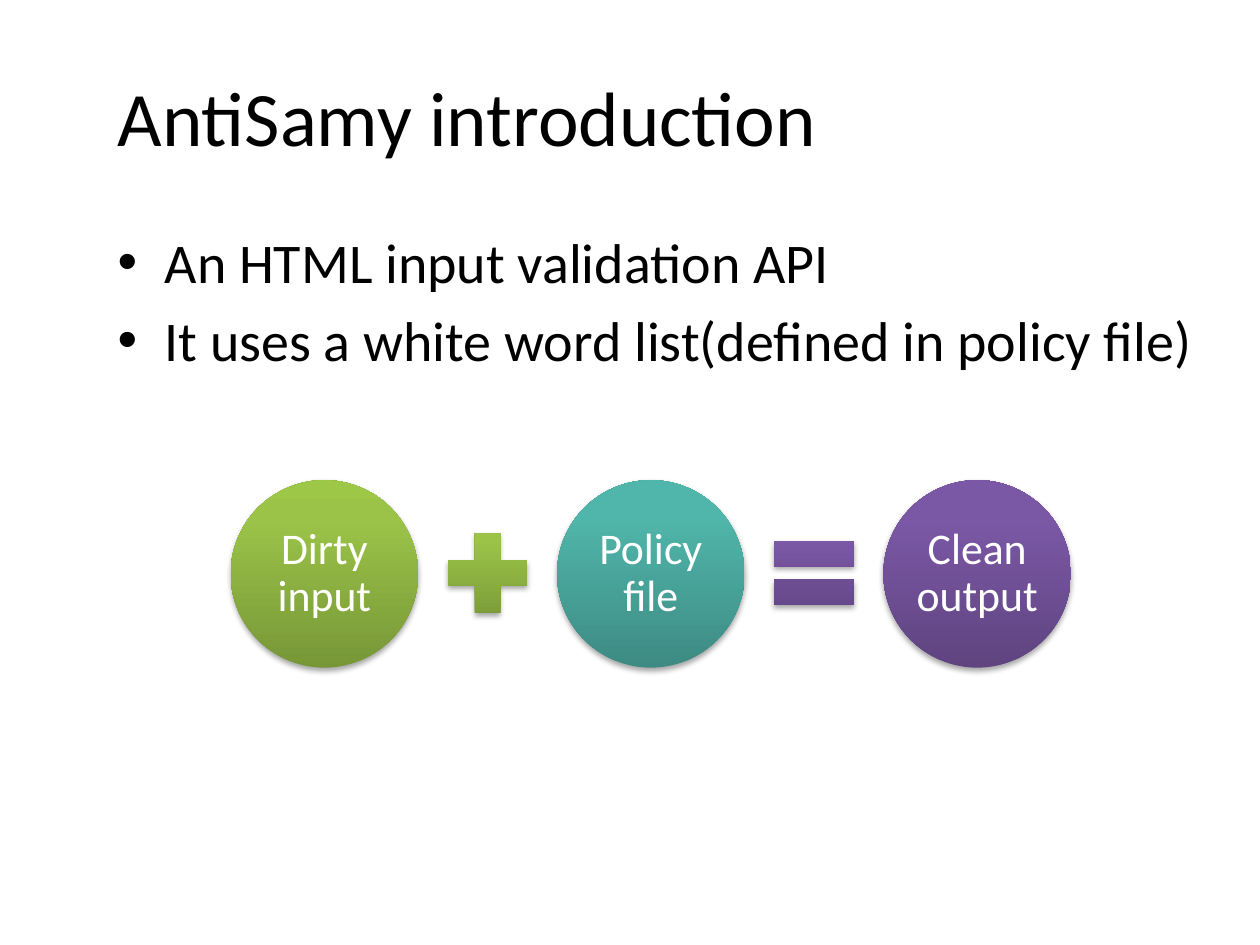
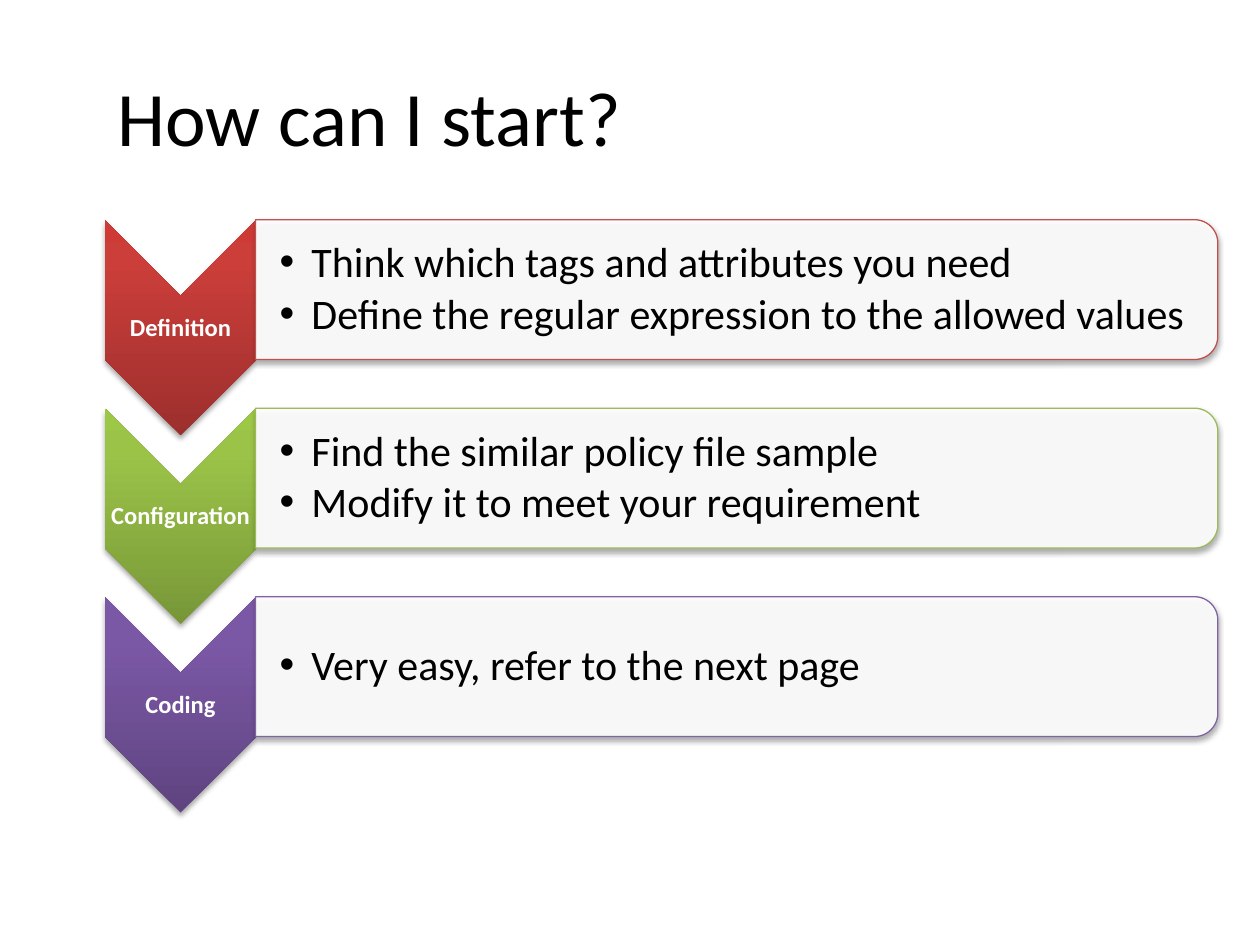
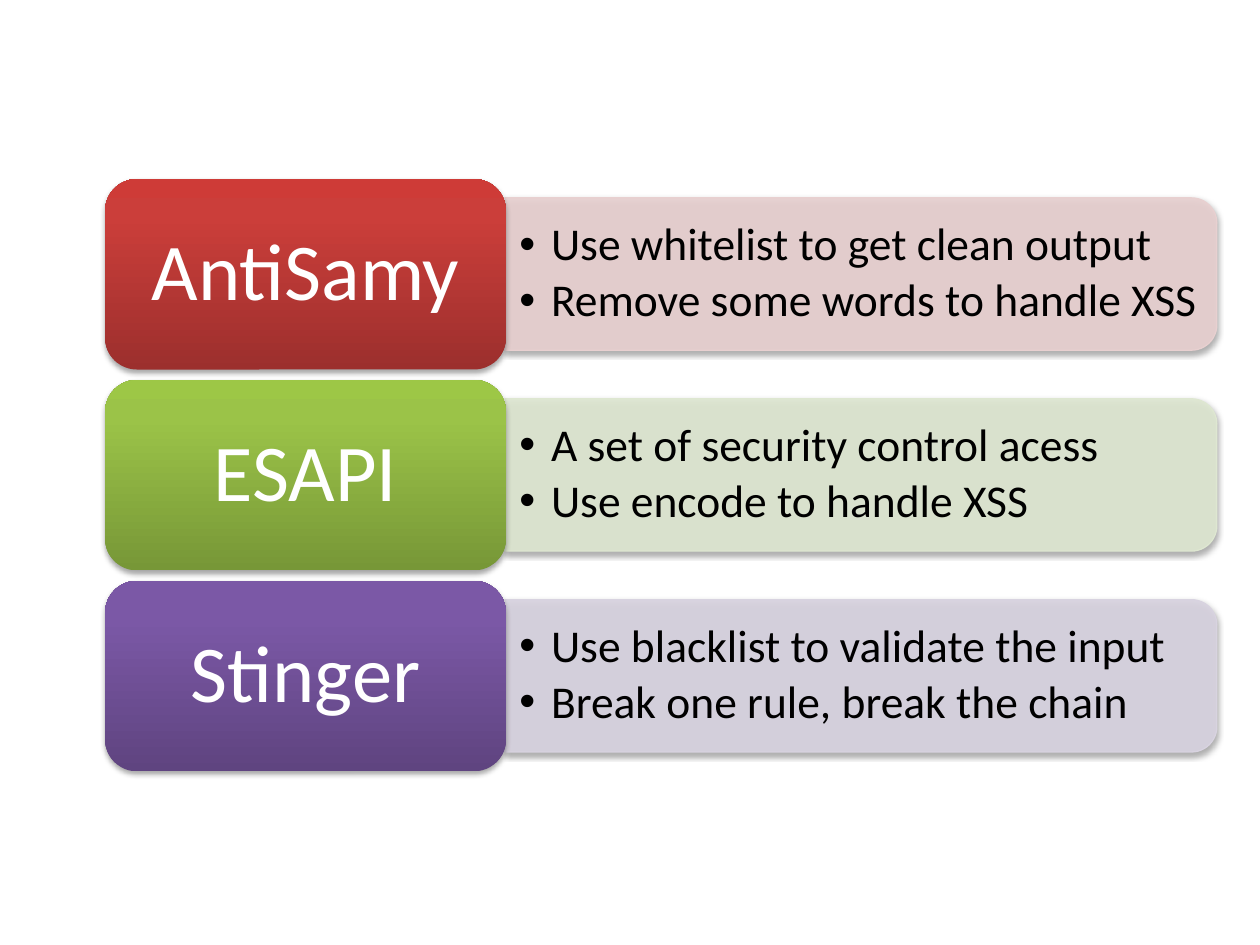
from lxml.etree import SubElement
from pptx import Presentation
from pptx.dml.color import RGBColor
from pptx.enum.shapes import MSO_SHAPE
from pptx.enum.text import MSO_ANCHOR, PP_ALIGN
from pptx.oxml import parse_xml
from pptx.oxml.ns import nsdecls, qn
from pptx.util import Cm, Pt

FONT = "Calibri"
BLACK = RGBColor(0x00, 0x00, 0x00)
WHITE = RGBColor(0xFF, 0xFF, 0xFF)
RED_LINE = RGBColor(0xC0, 0x50, 0x4D)
GREEN_LINE = RGBColor(0x9B, 0xBB, 0x59)
PURPLE_LINE = RGBColor(0x80, 0x64, 0xA2)
PALE_RED = RGBColor(0xE8, 0xD0, 0xD0)
PALE_GREEN = RGBColor(0xDE, 0xE7, 0xD1)
PALE_PURPLE = RGBColor(0xD8, 0xD3, 0xE0)
RED = (RGBColor(0x9C, 0x2F, 0x2D), RGBColor(0xCB, 0x3E, 0x3A), RGBColor(0xCE, 0x3B, 0x37))
GREEN = (RGBColor(0x77, 0x97, 0x37), RGBColor(0x9B, 0xC3, 0x48), RGBColor(0x9D, 0xC7, 0x46))
TEAL = (RGBColor(0x3D, 0x8B, 0x83), RGBColor(0x50, 0xB5, 0xAA), RGBColor(0x4E, 0xB8, 0xAC))
PURPLE = (RGBColor(0x5F, 0x44, 0x80), RGBColor(0x7B, 0x58, 0xA6), RGBColor(0x7C, 0x57, 0xA8))


def add_block(slide, kind, box, gradient=None, color=None, line_color=None):
    shape = slide.shapes.add_shape(kind, *[Cm(length) for length in box])
    properties = shape._element.spPr
    if gradient:
        stops = "".join(
            f'<a:gs pos="{position}"><a:srgbClr val="{stop}"/></a:gs>'
            for position, stop in zip((0, 80000, 100000), gradient)
        )
        properties.append(parse_xml(
            f'<a:gradFill {nsdecls("a")} rotWithShape="0"><a:gsLst>{stops}</a:gsLst>'
            '<a:lin ang="16200000" scaled="0"/></a:gradFill>'
        ))
        shape.line.fill.background()
    else:
        shape.fill.solid()
        shape.fill.fore_color.rgb = color
        fill_color = properties.find(qn("a:solidFill")).find(qn("a:srgbClr"))
        SubElement(fill_color, qn("a:alpha"), val="90000")
        shape.line.color.rgb = line_color
        shape.line.width = Pt(0.75)
    shape.shadow.inherit = False
    properties.find(qn("a:effectLst")).append(parse_xml(
        f'<a:outerShdw {nsdecls("a")} blurRad="40000" dist="23000" dir="5400000" rotWithShape="0">'
        '<a:srgbClr val="000000"><a:alpha val="35000"/></a:srgbClr></a:outerShdw>'
    ))
    return shape


def write_text(shape, lines, size, color=BLACK, align=PP_ALIGN.LEFT, anchor=MSO_ANCHOR.MIDDLE,
               margins=(0.25, 0.13), spacing=0.9, gap=0, indent=0, bold=False):
    frame = shape.text_frame
    frame.word_wrap = True
    frame.vertical_anchor = anchor
    frame.margin_left, frame.margin_right = Cm(margins[0]), Cm(min(margins[0], 0.25))
    frame.margin_top = frame.margin_bottom = Cm(margins[1])
    frame.text = "\n".join(lines)
    for index, paragraph in enumerate(frame.paragraphs):
        if indent:
            settings = paragraph._p.get_or_add_pPr()
            settings.set("marL", str(Cm(indent)))
            settings.set("indent", str(-Cm(indent)))
            SubElement(settings, qn("a:buFont"), typeface="Arial")
            SubElement(settings, qn("a:buChar"), char="•")
        paragraph.alignment = align
        paragraph.line_spacing = spacing
        if index:
            paragraph.space_before = Pt(gap)
        for run in paragraph.runs:
            run.font.name = FONT
            run.font.size = Pt(size)
            run.font.bold = bold
            run.font.color.rgb = color


presentation = Presentation()
presentation.slide_width = Cm(25.4)
presentation.slide_height = Cm(19.05)
blank_layout = presentation.slide_layouts[6]
introduction, start, comparison = [presentation.slides.add_slide(blank_layout) for _ in range(3)]

for slide, title in ((introduction, "AntiSamy introduction"), (start, "How can I start?")):
    title_box = slide.shapes.add_textbox(Cm(2.12), Cm(0.74), Cm(22.43), Cm(3.18))
    write_text(title_box, [title], 44, spacing=1.0)

body_box = introduction.shapes.add_textbox(Cm(2.12), Cm(4.45), Cm(22.43), Cm(11.94))
write_text(
    body_box,
    ["An HTML input validation API", "It uses a white word list(defined in policy file)"],
    32, anchor=MSO_ANCHOR.TOP, spacing=1.0, gap=6.4, indent=0.95,
)

EQUATION_STEP = 6.58
terms = (("Dirty input", GREEN), ("Policy file", TEAL), ("Clean output", PURPLE))
for index, (term, gradient) in enumerate(terms):
    circle = add_block(
        introduction, MSO_SHAPE.OVAL, (4.65 + index * EQUATION_STEP, 9.68, 3.78, 3.78), gradient
    )
    write_text(circle, [term], 25, WHITE, PP_ALIGN.CENTER, margins=(0.05, 0.05))
operators = ((MSO_SHAPE.MATH_PLUS, GREEN), (MSO_SHAPE.MATH_EQUAL, PURPLE))
for index, (operator, gradient) in enumerate(operators):
    add_block(introduction, operator, (8.74 + index * EQUATION_STEP, 10.46, 2.18, 2.18), gradient)

STEP_PITCH = 3.8
steps = (
    ("Definition", RED, RED_LINE,
     ["Think which tags and attributes you need",
      "Define the regular expression to the allowed values"]),
    ("Configuration", GREEN, GREEN_LINE,
     ["Find the similar policy file sample", "Modify it to meet your requirement"]),
    ("Coding", PURPLE, PURPLE_LINE, ["Very easy, refer to the next page"]),
)
for index, (step, gradient, line_color, details) in enumerate(steps):
    offset = index * STEP_PITCH
    chevron = add_block(start, MSO_SHAPE.CHEVRON, (1.47, 5.09 + offset, 4.34, 3.04), gradient)
    chevron.rotation = 90
    label = start.shapes.add_textbox(Cm(2.12), Cm(5.97 + offset), Cm(3.04), Cm(1.3))
    write_text(label, [step], 14, WHITE, PP_ALIGN.CENTER, margins=(0.02, 0.02), bold=True)
    panel = add_block(
        start, MSO_SHAPE.ROUND_2_SAME_RECTANGLE, (13.44, -3.86 + offset, 2.82, 19.4),
        color=WHITE, line_color=line_color,
    )
    panel.rotation = 90
    detail_box = start.shapes.add_textbox(Cm(5.16), Cm(4.57 + offset), Cm(19.25), Cm(2.54))
    write_text(detail_box, details, 24, margins=(0.48, 0.05), gap=3.6, indent=0.64)

TOOL_PITCH = 4.05
tools = (
    ("AntiSamy", RED, PALE_RED,
     ["Use whitelist to get clean output", "Remove some words to handle XSS"]),
    ("ESAPI", GREEN, PALE_GREEN,
     ["A set of security control acess", "Use encode to handle XSS"]),
    ("Stinger", PURPLE, PALE_PURPLE,
     ["Use blacklist to validate the input", "Break one rule, break the chain"]),
)
for index, (tool, gradient, pale_color, features) in enumerate(tools):
    offset = index * TOOL_PITCH
    panel = add_block(
        comparison, MSO_SHAPE.ROUND_2_SAME_RECTANGLE, (15.82, -1.65 + offset, 3.07, 14.35),
        color=pale_color, line_color=pale_color,
    )
    panel.rotation = 90
    feature_box = comparison.shapes.add_textbox(Cm(10.19), Cm(4.14 + offset), Cm(14.3), Cm(2.77))
    write_text(feature_box, features, 26, margins=(0.28, 0.13), gap=3.9, indent=0.64)
    card = add_block(
        comparison, MSO_SHAPE.ROUNDED_RECTANGLE, (2.12, 3.61 + offset, 8.08, 3.84), gradient
    )
    write_text(card, [tool], 46, WHITE, PP_ALIGN.CENTER, margins=(0.25, 0.25))

presentation.save("out.pptx")
